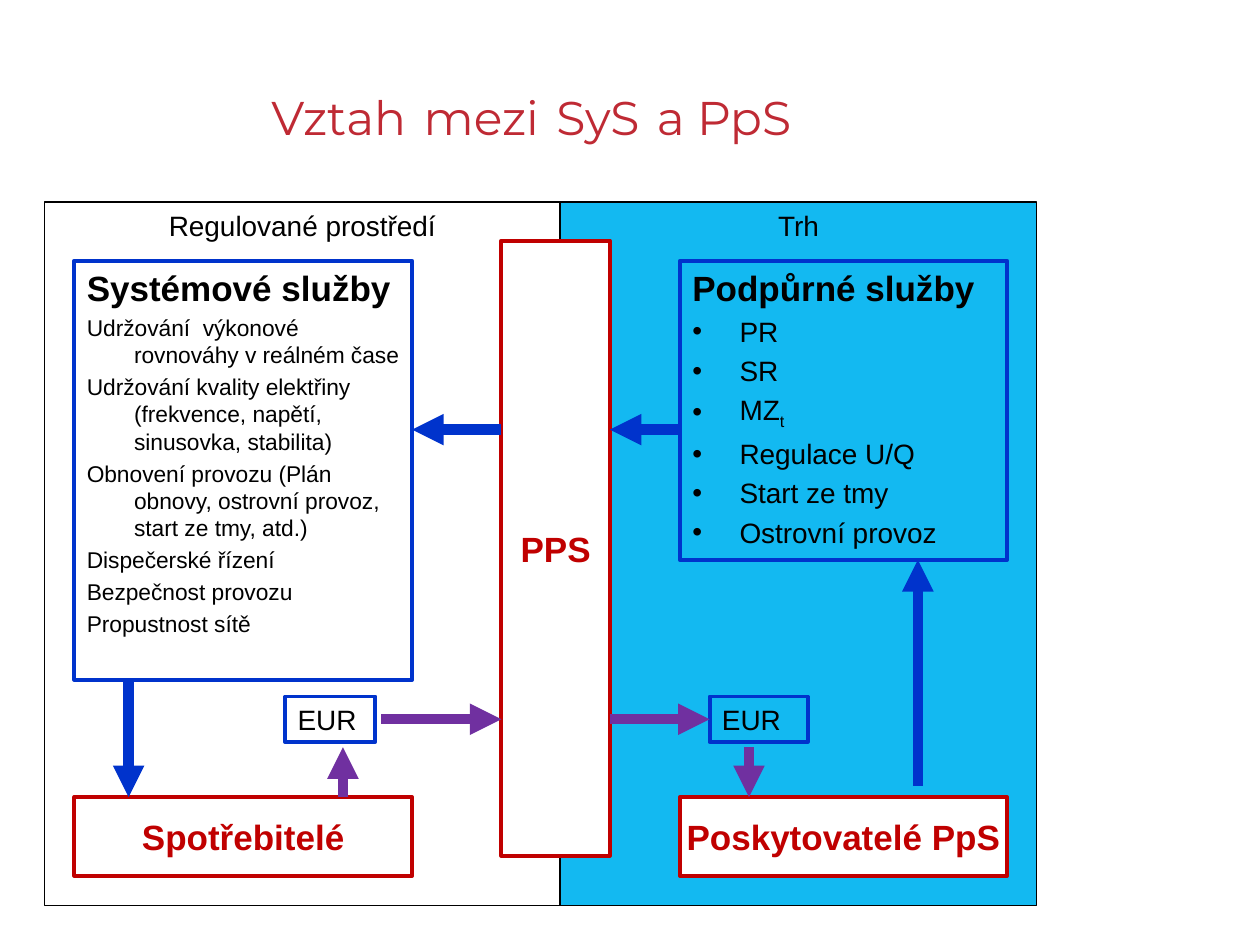
from pptx import Presentation
from pptx.dml.color import RGBColor
from pptx.enum.shapes import MSO_CONNECTOR as CONN, MSO_SHAPE as SHAPE
from pptx.enum.text import MSO_ANCHOR as ANCHOR, PP_ALIGN as ALIGN
from pptx.oxml.ns import qn
from pptx.util import Pt
from lxml.etree import SubElement

BLACK, WHITE, CYAN = "000000", "FFFFFF", "13B9F1"
BLUE, RED, PURPLE, TITLE_RED = "0033CC", "C00000", "7030A0", "BF2A34"


def rgb(value):
    return RGBColor.from_string(value)


class Diagram:
    font = "Arial"
    indent = 27
    box_line = 2.25
    arrow_line = 6

    def __init__(self, slide):
        self.s = slide

    def run(self, p, text, size, color=BLACK, bold=False, name=None, base=None):
        r = p.add_run()
        r.text = text
        fmt = {"name": name or self.font, "size": Pt(size), "bold": bold}
        for key, value in fmt.items():
            setattr(r.font, key, value)
        r.font.color.rgb = rgb(color)
        if base:
            r.font._element.set("baseline", str(base))

    def box(self, x, y, w, h, line, fill=None, width=None):
        sp = self.s.shapes.add_shape(SHAPE.RECTANGLE, Pt(x), Pt(y), Pt(w), Pt(h))
        sp.shadow.inherit = False
        if fill:
            sp.fill.solid()
            sp.fill.fore_color.rgb = rgb(fill)
        else:
            sp.fill.background()
        sp.line.color.rgb = rgb(line)
        sp.line.width = Pt(width or self.box_line)
        return sp

    def label(self, sp, text, size, color=BLACK, bold=False, anchor=ANCHOR.MIDDLE):
        tf = sp.text_frame
        tf.word_wrap = False
        tf.vertical_anchor = anchor
        p = tf.paragraphs[0]
        p.alignment = ALIGN.CENTER
        self.run(p, text, size, color, bold)

    def listing(self, sp, size, items, heading=None, bullet=False):
        """Each item is text, or a pair of text and its subscript."""
        tf = sp.text_frame
        tf.word_wrap = True
        tf.vertical_anchor = ANCHOR.TOP
        rows = ([heading] if heading else []) + items
        for i, row in enumerate(rows):
            p = tf.paragraphs[0] if i == 0 else tf.add_paragraph()
            p.alignment = ALIGN.LEFT
            is_heading = heading is not None and i == 0
            if i:
                p.space_before = Pt(size * 0.2)
            pPr = p._p.get_or_add_pPr()
            pPr.set("marL", str(Pt(self.indent)))
            pPr.set("indent", str(-Pt(self.indent)))
            if bullet and not is_heading:
                SubElement(pPr, qn("a:buFont"), typeface=self.font)
                SubElement(pPr, qn("a:buChar"), char="•")
            text, sub = row if isinstance(row, tuple) else (row, None)
            self.run(p, text, 20 if is_heading else size, bold=is_heading)
            if sub:
                self.run(p, sub, size, base=-25000)

    def arrow(self, x1, y1, x2, y2, color, target=None, site=1):
        c = self.s.shapes.add_connector(CONN.STRAIGHT, Pt(x1), Pt(y1), Pt(x2), Pt(y2))
        c.line.color.rgb = rgb(color)
        c.line.width = Pt(self.arrow_line)
        SubElement(c.line._get_or_add_ln(), qn("a:tailEnd"), type="triangle")
        SubElement(c._element.spPr, qn("a:effectLst"))
        if target is not None:
            c.end_connect(target, site)

    def title(self, x, y, w, h, words):
        tf = self.s.shapes.add_textbox(Pt(x), Pt(y), Pt(w), Pt(h)).text_frame
        tf.word_wrap = True
        tf.vertical_anchor = ANCHOR.MIDDLE
        p = tf.paragraphs[0]
        p.alignment = ALIGN.CENTER
        for i, word in enumerate(words):
            if i:
                self.run(p, " ", 36)
            self.run(p, word, 27, TITLE_RED, name="Montserrat")


def main():
    prs = Presentation()
    prs.slide_width, prs.slide_height = Pt(720), Pt(540)
    d = Diagram(prs.slides.add_slide(prs.slide_layouts[6]))

    # Title
    d.title(14.5, 26, 578, 73.5, ["Vztah", "mezi", "SyS", "a PpS"])

    # Two environments
    for text, x, w, fill in (("Regulované prostředí", 25.5, 294.5, None),
                             ("Trh", 320, 272.5, CYAN)):
        area = d.box(x, 115.5, w, 402, BLACK, fill, 0.75)
        d.label(area, text, 16, anchor=ANCHOR.TOP)

    # Lists of services
    left, left_w, right, right_w, top = 42.5, 193, 388.5, 187, 149
    system = d.box(left, top, left_w, 239.5, BLUE)
    d.listing(system, 13, [
        "Udržování  výkonové rovnováhy v reálném čase",
        "Udržování kvality elektřiny (frekvence, napětí, sinusovka, stabilita)",
        "Obnovení provozu (Plán obnovy, ostrovní provoz, start ze tmy, atd.)",
        "Dispečerské řízení", "Bezpečnost provozu", "Propustnost sítě",
    ], heading="Systémové služby")
    support = d.box(right, top, right_w, 171, BLUE)
    d.listing(support, 16, [
        "PR", "SR", ("MZ", "t"), "Regulace U/Q", "Start ze tmy", "Ostrovní provoz",
    ], heading="Podpůrné služby", bullet=True)

    # Participants
    pps_x, pps_w, low = 286.5, 62, 455.5
    for text, x, y, w, h in (
            ("PPS", pps_x, 137.5, pps_w, 351.5),
            ("Spotřebitelé", left, low, left_w, 45),
            ("Poskytovatelé PpS", right, low, right_w, 45)):
        d.label(d.box(x, y, w, h, RED, WHITE), text, 20, RED, True)

    # Payments
    pay_y, pay_h = 411, 26
    payments = [d.box(x, pay_y - pay_h / 2, w, pay_h, BLUE)
                for x, w in ((163, 51.5), (405.5, 56))]
    for sp in payments:
        d.listing(sp, 16, ["EUR"])

    # Flow of services
    flow_y, pps_right = 245.5, pps_x + pps_w
    d.arrow(right, flow_y, pps_right, flow_y, BLUE)
    d.arrow(pps_x, flow_y, left + left_w, flow_y, BLUE)
    d.arrow(524.5, 449, 524.5, 320, BLUE)
    d.arrow(73.5, 388.5, 73.5, low, BLUE)

    # Flow of money
    d.arrow(196, low, 196, 427, PURPLE)
    d.arrow(218, pay_y, pps_x, pay_y, PURPLE)
    d.arrow(pps_right, pay_y, 405.5, pay_y, PURPLE, payments[1])
    d.arrow(428, 427, 428, low, PURPLE)

    prs.save("out.pptx")


if __name__ == "__main__":
    main()
